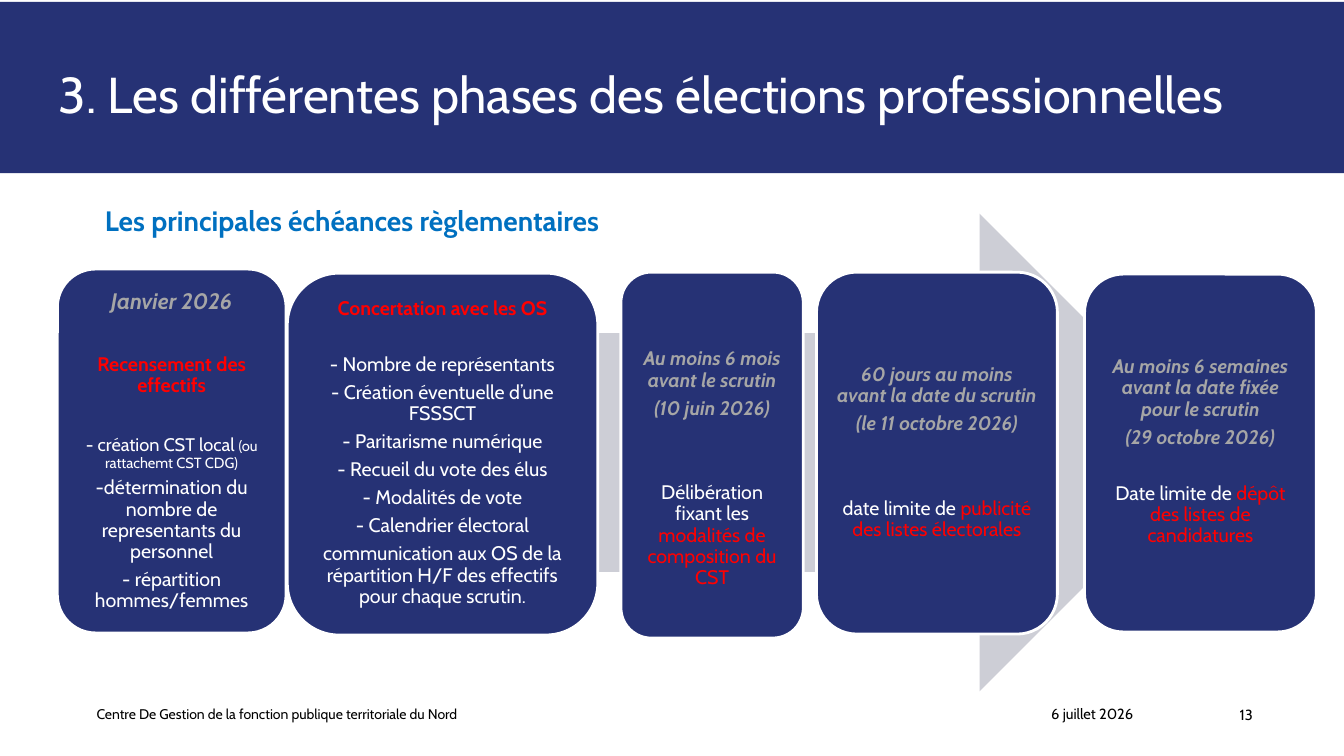
from dataclasses import dataclass

from pptx import Presentation
from pptx.dml.color import RGBColor
from pptx.enum.shapes import MSO_SHAPE as Preset
from pptx.enum.text import MSO_ANCHOR as Anchor, MSO_AUTO_SIZE as AutoSize, PP_ALIGN as Align
from pptx.oxml.ns import qn
from pptx.util import Pt

FONT = "Cabin"
NAVY, GREY_ARROW, WHITE, BLACK = "263275", "CDCED6", "FFFFFF", "000000"
RED, GREY, BLUE = "FF0000", "A6A6A6", "0070C0"
BLANK_14, BLANK_16 = 20.2, 23.1


@dataclass
class Part:
    text: str
    color: str = WHITE
    size: float = 14
    bold: bool = False
    italic: bool = False


def heading(text):
    return Part(text, RED, bold=True)


def deadline(text, size=14):
    return Part(text, GREY, size, bold=True, italic=True)


CARDS = [
    ((41, 192.2, 163.4, 259.9), 7, [
        (0, [deadline("Janvier 2026", 16)]),
        (BLANK_16, [heading("Recensement des effectifs")]),
        (BLANK_16, [Part("- création CST local ", size=13),
                    Part("(ou rattachemt CST CDG)", size=10.5)]),
        (0, [Part("-détermination du nombre de representants du personnel")]),
        (0, [Part("- répartition hommes/femmes")]),
    ]),
    ((205.2, 195.1, 221.8, 258.5), 7, [
        (0, [heading("Concertation avec les OS")]),
        (BLANK_14, [Part("- Nombre de représentants")]),
        (0, [Part("- Création éventuelle d’une FSSSCT")]),
        (0, [Part("- Paritarisme numérique")]),
        (0, [Part("- Recueil du vote des élus")]),
        (0, [Part("- Modalités de vote")]),
        (0, [Part("- Calendrier électoral")]),
        (0, [Part("communication aux OS de la répartition H/F des effectifs "
                  "pour chaque scrutin.")]),
    ]),
    ((443.5, 194.4, 130.3, 261.4), 48.5, [
        (0, [deadline("Au moins 6 mois avant le scrutin")]),
        (0, [deadline("(10 juin 2026)")]),
        (2 * BLANK_14, [Part("Délibération fixant les "),
                        Part("modalités de composition du CST", RED)]),
    ]),
    ((583.2, 194.4, 172.1, 258.5), 57.5, [
        (0, [deadline("60 jours au moins avant la date du scrutin")]),
        (0, [deadline("(le 11 octobre 2026)")]),
        (2 * BLANK_14, [Part("date limite de "),
                        Part("publicité des listes électorales", RED)]),
    ]),
    ((774.7, 195.8, 165.6, 255.6), 51, [
        (0, [deadline("Au moins 6 semaines avant la date fixée pour le scrutin")]),
        (0, [deadline("(29 octobre 2026)")]),
        (BLANK_14, [Part("Date limite de "),
                    Part("dépôt des listes de candidatures", RED)]),
    ]),
]

FOOTERS = [
    ((61.9, 500.4, 296.6, 28.8), "Centre De Gestion de la fonction publique territoriale du Nord", 10),
    ((743.8, 499.7, 126, 20.2), "6 juillet 2026", 10.5),
    ((878.4, 500.4, 58.3, 20.2), "13", 10.5),
]


def rgb(color):
    return RGBColor.from_string(color)


def format_run(run, part):
    font = run.font
    font.name = FONT
    font.size = Pt(part.size)
    font.bold = part.bold
    font.italic = part.italic
    font.color.rgb = rgb(part.color)


def add_shape(slide, preset, box, fill, outline=None):
    shape = slide.shapes.add_shape(preset, *map(Pt, box))
    shape.shadow.inherit = False
    shape.fill.solid()
    shape.fill.fore_color.rgb = rgb(fill)
    if outline:
        shape.line.color.rgb = rgb(outline)
        shape.line.width = Pt(2)
    else:
        shape.line.fill.background()
    return shape


def add_card(slide, box, top_inset, paragraphs):
    frame = add_shape(slide, Preset.ROUNDED_RECTANGLE, box, NAVY, WHITE).text_frame
    frame.word_wrap = True
    frame.vertical_anchor = Anchor.TOP
    frame.margin_left = frame.margin_right = frame.margin_bottom = Pt(4.5)
    frame.margin_top = Pt(top_inset)
    for index, (gap, parts) in enumerate(paragraphs):
        paragraph = frame.add_paragraph() if index else frame.paragraphs[0]
        paragraph.alignment = Align.CENTER
        paragraph.line_spacing = 0.9
        paragraph.space_before = Pt(gap)
        paragraph.space_after = Pt(0.35 * parts[0].size)
        for part in parts:
            run = paragraph.add_run()
            run.text = part.text
            format_run(run, part)


def fill_placeholder(placeholder, box, part, anchor):
    placeholder.left, placeholder.top, placeholder.width, placeholder.height = map(Pt, box)
    frame = placeholder.text_frame
    frame.text = part.text
    frame.word_wrap = True
    frame.auto_size = AutoSize.NONE
    frame.vertical_anchor = anchor
    paragraph = frame.paragraphs[0]
    properties = paragraph._p.get_or_add_pPr()
    properties.set("marL", "0")
    properties.set("indent", "0")
    properties.append(properties.makeelement(qn("a:buNone"), {}))
    paragraph.alignment = Align.LEFT
    paragraph.line_spacing = 0.9
    paragraph.space_before = Pt(0)
    format_run(paragraph.runs[0], part)


def add_footer(slide, box, text, size):
    frame = slide.shapes.add_textbox(*map(Pt, box)).text_frame
    frame.word_wrap = True
    frame.text = text
    format_run(frame.paragraphs[0].runs[0], Part(text, BLACK, size))


def main():
    presentation = Presentation()
    presentation.slide_width, presentation.slide_height = Pt(960), Pt(540)
    slide = presentation.slides.add_slide(presentation.slide_layouts[1])

    band = add_shape(slide, Preset.RECTANGLE, (0, 1.4, 960, 122.4), NAVY)
    slide.shapes.element.insert(2, band.element)
    fill_placeholder(slide.shapes.title, (34.6, 46.1, 916.6, 46.1),
                     Part("3. Les différentes phases des élections professionnelles", size=36),
                     Anchor.MIDDLE)
    fill_placeholder(slide.placeholders[1], (67.7, 144.7, 823, 30.2),
                     Part("Les principales échéances règlementaires", BLUE, 20, bold=True),
                     Anchor.TOP)

    add_shape(slide, Preset.RIGHT_ARROW, (80.6, 152.6, 789.8, 341.3), GREY_ARROW)
    for box, top_inset, paragraphs in CARDS:
        add_card(slide, box, top_inset, paragraphs)
    for box, text, size in FOOTERS:
        add_footer(slide, box, text, size)

    presentation.save("out.pptx")


if __name__ == "__main__":
    main()
